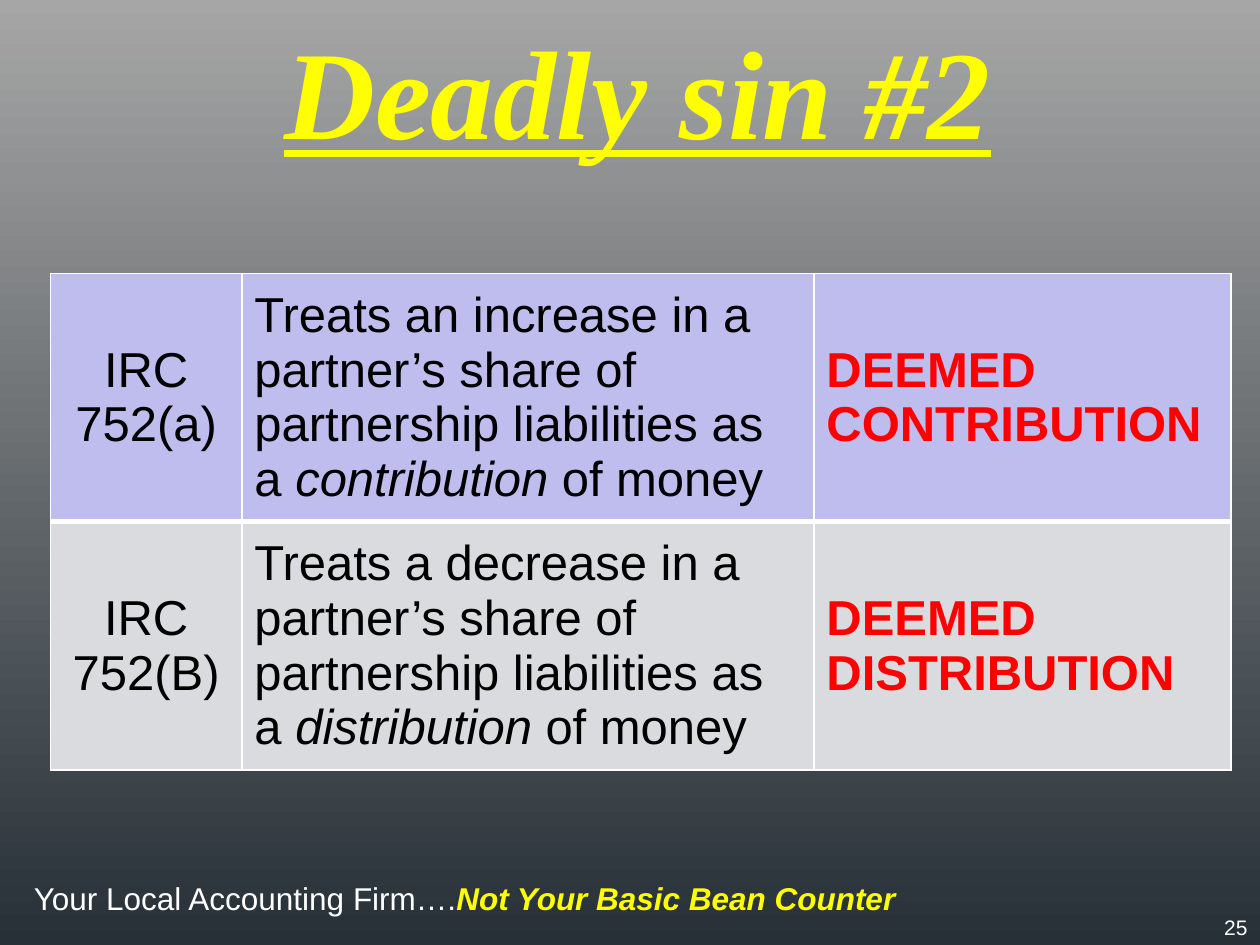
import pptx
import pptx.util
import pptx.dml.color
import pptx.enum.text
import pptx.oxml
import pptx.oxml.ns
from pptx.util import Inches

HUES = {
    "top": "A6A6A6", "base": "273037", "white": "FFFFFF", "black": "000000",
    "yellow": "FFFF00", "red": "FF0000", "lilac": "BEBDED", "grey": "D9DBDE",
}
ALIGN = pptx.enum.text.PP_ALIGN
MIDDLE = pptx.enum.text.MSO_ANCHOR.MIDDLE
BODY = {"name": "Arial", "size": 28, "hue": "black"}
STRONG = {**BODY, "hue": "red", "bold": True}
NOTE = {"name": "Arial", "size": 18, "hue": "white"}
SLOGAN = {**NOTE, "hue": "yellow", "bold": True, "italic": True}
NUMBER = {**NOTE, "size": 12}
TITLE = {"name": "Times New Roman", "size": 72, "hue": "yellow",
         "bold": True, "italic": True, "underline": True}


def color(key):
    return pptx.dml.color.RGBColor.from_string(HUES[key])


def write(frame, runs, align=ALIGN.LEFT):
    """Fill the first paragraph with (text, format) runs."""
    para = frame.paragraphs[0]
    para.alignment = align
    for text, form in runs:
        run = para.add_run()
        run.text = text
        for key, value in form.items():
            if key == "hue":
                run.font.color.rgb = color(value)
            else:
                value = pptx.util.Pt(value) if key == "size" else value
                setattr(run.font, key, value)


def add_text(slide, at, runs, align=ALIGN.LEFT, anchor=None):
    frame = slide.shapes.add_textbox(*map(Inches, at)).text_frame
    frame.word_wrap = True
    frame.vertical_anchor = anchor
    write(frame, runs, align)


def set_edges(cell, widths):
    """Draw white cell borders; widths maps side to points."""
    props = cell._tc.get_or_add_tcPr()
    for spot, (side, width) in enumerate(widths.items()):
        props.insert(spot, pptx.oxml.parse_xml(
            f'<a:ln{side} {pptx.oxml.ns.nsdecls("a")} w="{pptx.util.Pt(width)}">'
            f'<a:solidFill><a:srgbClr val="{HUES["white"]}"/></a:solidFill>'
            f'</a:ln{side}>'))


def add_rules(slide, rules):
    """Build the table with one row for each (code, change, effect, fill)."""
    table = slide.shapes.add_table(
        len(rules), 3, Inches(0.4), Inches(2.17), Inches(9.37), Inches(3.94)).table
    for col, width in zip(table.columns, (1.52, 4.54, 3.31)):
        col.width = Inches(width)
    for r, (code, change, effect, fill) in enumerate(rules):
        start = f"Treats {change} in a partner’s share of partnership liabilities as a "
        texts = (
            [(f"IRC {code}", BODY)],
            [(start, BODY), (effect, {**BODY, "italic": True}), (" of money", BODY)],
            [(f"DEEMED {effect.upper()}", STRONG)],
        )
        for c, runs in enumerate(texts):
            cell = table.cell(r, c)
            cell.vertical_anchor = MIDDLE
            cell.fill.solid()
            cell.fill.fore_color.rgb = color(fill)
            write(cell.text_frame, runs, ALIGN.LEFT if c else ALIGN.CENTER)
            set_edges(cell, {"L": 1, "R": 1, "T": 3 if r else 1,
                             "B": 1 if r == len(rules) - 1 else 3})


def shade(slide):
    fill = slide.background.fill
    fill.gradient()
    fill.gradient_angle = 270
    for stop, key in zip(fill.gradient_stops, ("top", "base")):
        stop.color.rgb = color(key)


def main():
    deck = pptx.Presentation()
    deck.slide_width, deck.slide_height = Inches(10), Inches(7.5)
    slide = deck.slides.add_slide(deck.slide_layouts[6])
    shade(slide)
    add_text(slide, (0.17, 6.93, 7.59, 0.4),
             [("Your Local Accounting Firm….", NOTE),
              ("Not Your Basic Bean Counter", SLOGAN)])
    add_text(slide, (8.97, 7.19, 1.03, 0.33), [("25", NUMBER)], ALIGN.RIGHT, MIDDLE)
    add_text(slide, (0.99, 0.06, 8.14, 1.31), [("Deadly sin #2", TITLE)], ALIGN.CENTER)
    add_rules(slide, [
        ("752(a)", "an increase", "contribution", "lilac"),
        ("752(B)", "a decrease", "distribution", "grey"),
    ])
    deck.save("out.pptx")


if __name__ == "__main__":
    main()
